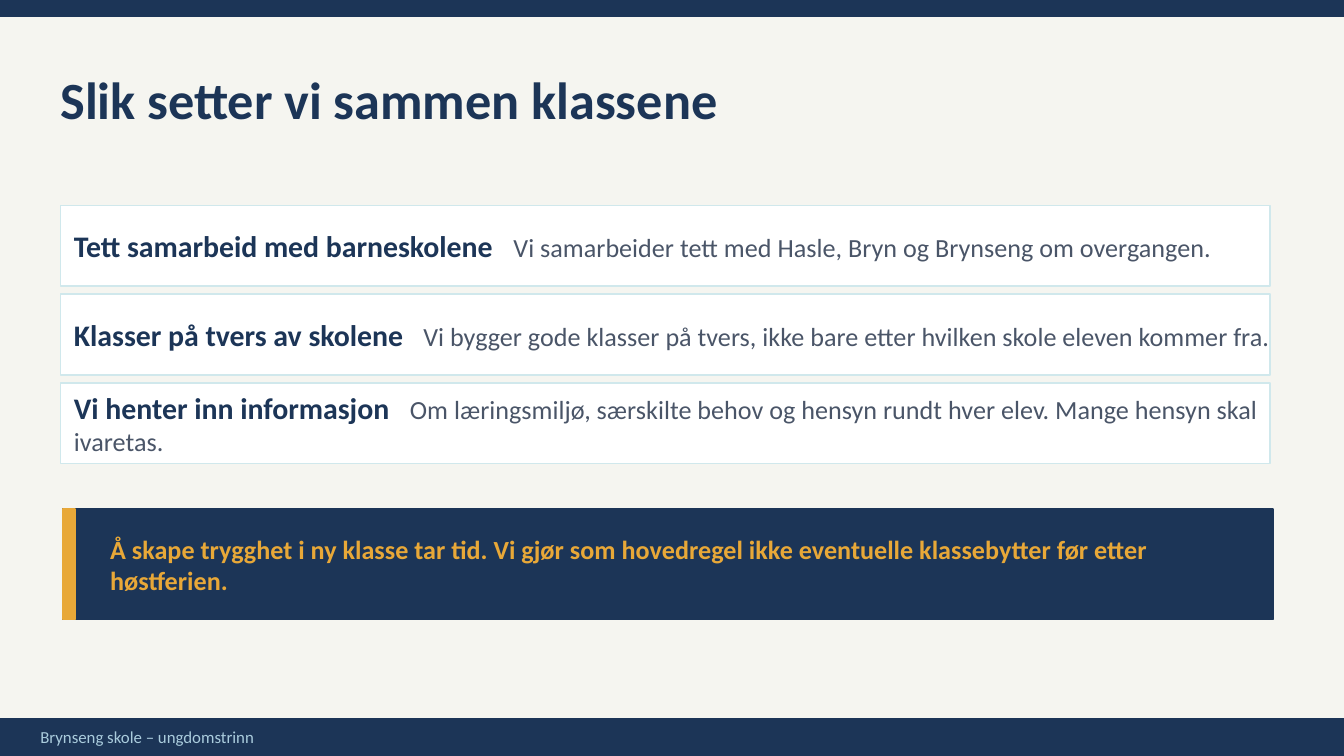
from dataclasses import dataclass

from lxml.etree import SubElement
from pptx import Presentation
from pptx.dml.color import RGBColor
from pptx.enum.shapes import MSO_SHAPE
from pptx.enum.text import MSO_ANCHOR, PP_ALIGN
from pptx.oxml.ns import qn
from pptx.util import Inches, Pt


@dataclass(frozen=True)
class Theme:
    font: str = "Calibri"
    background: str = "F5F5F0"
    navy: str = "1C3557"
    amber: str = "E8A838"
    white: str = "FFFFFF"
    border: str = "D0E8EC"
    body: str = "4A5568"
    footer: str = "AACCDD"
    title_size: int = 28
    heading_size: int = 16
    body_size: int = 14
    footer_size: int = 9


THEME = Theme()
WIDTH, HEIGHT = 10, 10 * 9 / 16

# Heading, explanation, and where the explanation starts
PRINCIPLES = [
    ("Tett samarbeid med barneskolene",
     "Vi samarbeider tett med Hasle, Bryn og Brynseng om overgangen.", 3.27),
    ("Klasser på tvers av skolene",
     "Vi bygger gode klasser på tvers, ikke bare etter hvilken skole eleven kommer fra.", 2.6),
    ("Vi henter inn informasjon",
     "Om læringsmiljø, særskilte behov og hensyn rundt hver elev. Mange hensyn skal ivaretas.", 2.5),
]


def color(value):
    return RGBColor.from_string(value)


def add_box(s, x, y, w, h, fill, line=None):
    sp = s.shapes.add_shape(MSO_SHAPE.RECTANGLE, Inches(x), Inches(y), Inches(w), Inches(h))
    sp.shadow.inherit = False
    sp.fill.solid()
    sp.fill.fore_color.rgb = color(fill)
    sp.line.color.rgb = color(line or fill)
    sp.line.width = Pt(1)


def set_frame(tf):
    tf.word_wrap = True
    tf.vertical_anchor = MSO_ANCHOR.MIDDLE
    tf.margin_left = tf.margin_right = tf.margin_top = tf.margin_bottom = 0


def style_run(r, size, fill, bold=False):
    r.font.name = THEME.font
    r.font.size = Pt(size)
    r.font.bold = bold
    r.font.color.rgb = color(fill)


def add_text(s, x, y, w, h, runs, tab=None):
    """Add one paragraph of (text, size, colour, bold) runs."""
    tf = s.shapes.add_textbox(Inches(x), Inches(y), Inches(w), Inches(h)).text_frame
    set_frame(tf)
    p = tf.paragraphs[0]
    if tab:
        tabs = SubElement(p._p.get_or_add_pPr(), qn("a:tabLst"))
        SubElement(tabs, qn("a:tab"), pos=str(Inches(tab)), algn="l")
    for text, *style in runs:
        r = p.add_run()
        r.text = text
        style_run(r, *style)


def add_bars(s):
    add_box(s, 0, 0, WIDTH, 0.12, THEME.navy)
    add_box(s, 0, 5.35, WIDTH, 0.28, THEME.navy)
    add_text(s, 0.3, 5.36, 9.4, 0.24,
             [("Brynseng skole – ungdomstrinn", THEME.footer_size, THEME.footer)])


def set_title(s, x, y, w, h, text):
    sp = s.shapes.title
    sp.left, sp.top, sp.width, sp.height = (Inches(v) for v in (x, y, w, h))
    tf = sp.text_frame
    tf.text = text
    set_frame(tf)
    p = tf.paragraphs[0]
    p.alignment = PP_ALIGN.LEFT
    style_run(p.runs[0], THEME.title_size, THEME.navy, True)


def add_principles(s, x, y, w, row_h, gap):
    for i, (heading, body, tab) in enumerate(PRINCIPLES):
        top = y + i * (row_h + gap)
        add_box(s, x, top, w, row_h, THEME.white, THEME.border)
        add_text(s, x + 0.1, top, w + 0.11, row_h,
                 [(heading + "\t", THEME.heading_size, THEME.navy, True),
                  (body, THEME.body_size, THEME.body)], tab)


def add_callout(s, x, y, w, h, text):
    add_box(s, x, y, w, h, THEME.navy)
    add_box(s, x, y, 0.09, h, THEME.amber)
    add_text(s, x + 0.35, y, w - 0.5, h, [(text, THEME.body_size, THEME.amber, True)])


def main():
    prs = Presentation()
    prs.slide_width, prs.slide_height = Inches(WIDTH), Inches(HEIGHT)
    s = prs.slides.add_slide(prs.slide_layouts[5])
    s.background.fill.solid()
    s.background.fill.fore_color.rgb = color(THEME.background)

    add_bars(s)
    set_title(s, 0.45, 0.41, 9, 0.65, "Slik setter vi sammen klassene")
    add_principles(s, 0.45, 1.53, 9, 0.6, 0.06)
    add_callout(s, 0.47, 3.79, 9, 0.82,
                "Å skape trygghet i ny klasse tar tid. Vi gjør som hovedregel "
                "ikke eventuelle klassebytter før etter høstferien.")
    prs.save("out.pptx")


if __name__ == "__main__":
    main()
